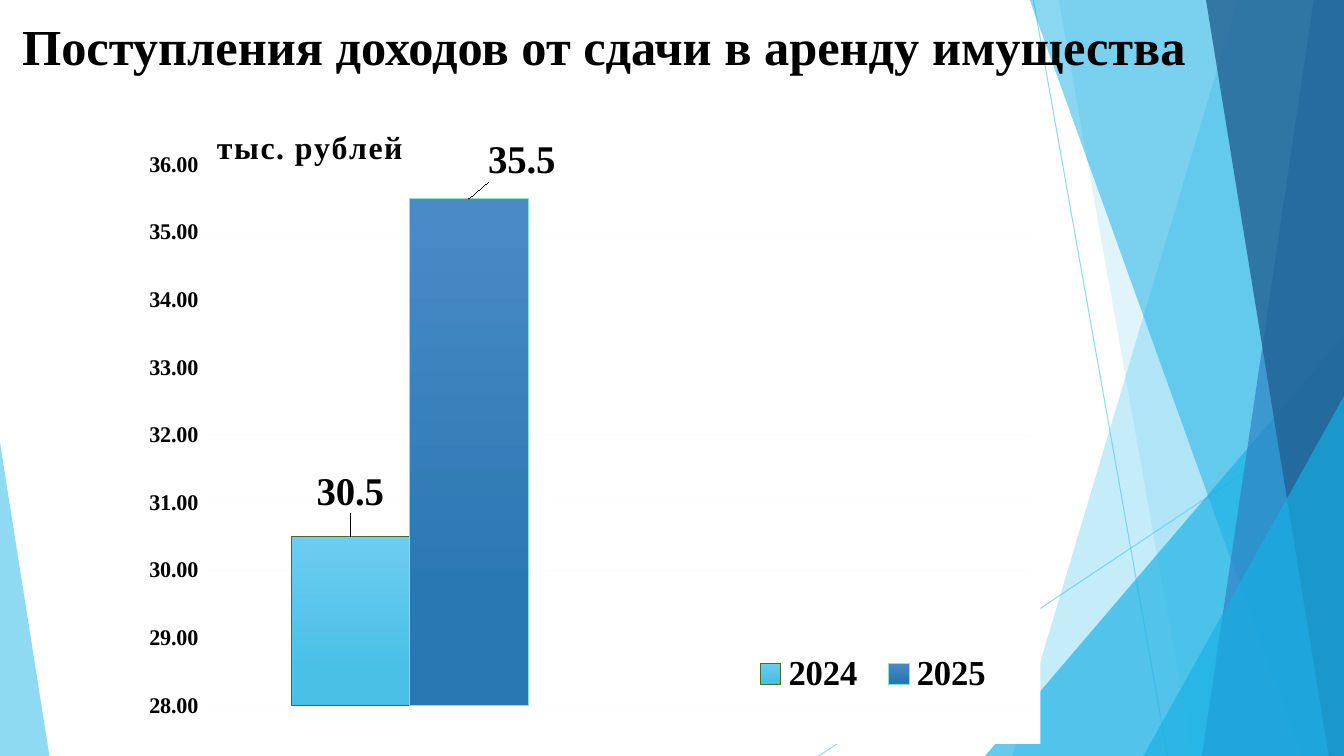
from lxml import etree
from pptx import Presentation
from pptx.chart.data import CategoryChartData
from pptx.dml.color import RGBColor
from pptx.enum.chart import XL_CHART_TYPE, XL_LABEL_POSITION, XL_LEGEND_POSITION, XL_TICK_MARK
from pptx.enum.shapes import MSO_CONNECTOR, MSO_SHAPE
from pptx.enum.text import MSO_ANCHOR
from pptx.oxml.ns import qn
from pptx.util import Inches, Pt

TRIANGLE = MSO_SHAPE.ISOSCELES_TRIANGLE
STRAIGHT = MSO_CONNECTOR.STRAIGHT
COLUMNS = XL_CHART_TYPE.COLUMN_CLUSTERED
LABEL_OUTSIDE = XL_LABEL_POSITION.OUTSIDE_END
LEGEND_BOTTOM = XL_LEGEND_POSITION.BOTTOM
NO_TICK = XL_TICK_MARK.NONE
TOP = MSO_ANCHOR.TOP

SERIF = "Times New Roman"
COLORS = {
    "black": "000000", "white": "FFFFFF", "grid": "F2F2F2",
    "sky": "5FCBEF", "cyan": "17B0E4", "blue": "2E83C3", "navy": "226292",
    "light top": "6CCDF0", "light bottom": "4BC0E6", "olive": "4C6E1B",
    "dark top": "4A8BC6", "dark bottom": "2A78B2", "mint": "8EE3C7",
}
RGB = {name: RGBColor.from_string(value) for name, value in COLORS.items()}


def set_opacity(element, percent):
    for color in element.iter(qn("a:srgbClr")):
        etree.SubElement(color, qn("a:alpha"), val=str(percent * 1000))


def set_layout(parent, index, **settings):
    """Give a chart part a manual layout as its child number index."""
    for old in parent.findall(qn("c:layout")):
        parent.remove(old)
    layout = etree.Element(qn("c:layout"))
    manual = etree.SubElement(layout, qn("c:manualLayout"))
    for name, value in settings.items():
        etree.SubElement(manual, qn("c:" + name), val=str(value))
    parent.insert(index, layout)


deck = Presentation()
deck.slide_width, deck.slide_height = Inches(13.33), Inches(7.5)
page = deck.slides.add_slide(deck.slide_layouts[6])

# Background decoration
for ends in [(10.25, 0, 11.58, 7.5), (13.33, 4.03, 8.12, 7.5)]:
    line = page.shapes.add_connector(STRAIGHT, *[Inches(value) for value in ends])
    line.line.color.rgb = RGB["sky"]
    line.line.width = Pt(0.75)
    properties = line._element.spPr
    set_opacity(properties, 70)
    etree.SubElement(properties, qn("a:effectLst"))

# Bands: top x, bottom x. Triangles: left, top, width, apex.
facets = [
    ("sky", 36, (12.28, 10.04)),
    ("sky", 20, (10.5, 11.83)),
    ("cyan", 66, (9.77, 3.33, 3.56, 1)),
    ("cyan", 50, (10.21, 12.91)),
    ("blue", 70, (13.03, 11.92)),
    ("navy", 80, (11.96, 13.18)),
    ("cyan", 66, (11.34, 3.93, 1.99, 1)),
    ("sky", 70, (0, 4.39, 0.49, 0)),
]
for color, opacity, geometry in facets:
    if len(geometry) == 2:
        top_x, bottom_x = geometry
        corners = [(13.33, -0.01), (13.33, 7.5), (bottom_x, 7.5)]
        outline = page.shapes.build_freeform(Inches(top_x), Inches(-0.01))
        outline.add_line_segments([(Inches(x), Inches(y)) for x, y in corners])
        facet = outline.convert_to_shape()
    else:
        left, top, width, apex = geometry
        facet = page.shapes.add_shape(
            TRIANGLE, Inches(left), Inches(top), Inches(width), Inches(7.5 - top))
        facet.adjustments[0] = apex
    facet.shadow.inherit = False
    facet.line.fill.background()
    facet.fill.solid()
    facet.fill.fore_color.rgb = RGB[color]
    set_opacity(facet._element.spPr, opacity)

# Heading
box = page.shapes.add_textbox(Inches(0.06), Inches(0.1), Inches(13.2), Inches(1.04))
frame = box.text_frame
frame.word_wrap = True
frame.vertical_anchor = TOP
frame.margin_left = Inches(0.16)
span = frame.paragraphs[0].add_run()
span.text = "Поступления доходов от сдачи в аренду имущества"
span.font.name, span.font.size, span.font.bold = SERIF, Pt(36), True
span.font.color.rgb = RGB["black"]

# Chart
data = CategoryChartData()
data.categories = ["1", ""]
data.add_series("2024", [30.5, None])
data.add_series("2025", [35.5, None])
chart = page.shapes.add_chart(
    COLUMNS, Inches(1.48), Inches(1.07), Inches(8.84), Inches(6.31), data).chart
chart.font.name, chart.font.size = "Lato", Pt(10)
chart.font.color.rgb = RGB["black"]

area = etree.Element(qn("c:spPr"))
area_fill = etree.SubElement(area, qn("a:solidFill"))
etree.SubElement(area_fill, qn("a:srgbClr"), val=COLORS["white"])
area_line = etree.SubElement(area, qn("a:ln"))
etree.SubElement(area_line, qn("a:noFill"))
chart_node = chart.element.find(qn("c:chart"))
chart_node.addnext(area)
set_layout(chart_node.find(qn("c:plotArea")), 0, layoutTarget="inner",
           xMode="edge", yMode="edge", x=0.05, y=0.09, w=0.94, h=0.85)

chart.has_title = True
span = chart.chart_title.text_frame.paragraphs[0].add_run()
span.text = "тыс. рублей"
span._r.get_or_add_rPr().set("spc", "100")
set_layout(chart_node.find(qn("c:title")), 1, xMode="edge", yMode="edge", x=0.06, y=0.02)

chart.has_legend = True
chart.legend.position = LEGEND_BOTTOM
chart.legend.include_in_layout = False
set_layout(chart_node.find(qn("c:legend")), 1, xMode="edge", yMode="edge",
           x=0.66, y=0.84, w=0.3, h=0.1)

chart.category_axis.visible = False
scale = chart.value_axis
scale.minimum_scale, scale.maximum_scale, scale.major_unit = 28, 36, 1
scale.major_tick_mark = scale.minor_tick_mark = NO_TICK
scale.tick_labels.number_format = "0.00"
scale.tick_labels.number_format_is_linked = False
scale.format.line.fill.background()
grid = scale.major_gridlines.format.line
grid.color.rgb = RGB["grid"]
grid.width = Pt(0.75)
set_opacity(scale.major_gridlines._xAx.find(qn("c:majorGridlines")), 10)

fonts = [(span.font, 23), (chart.legend.font, 25), (scale.tick_labels.font, 16)]

plot = chart.plots[0]
plot.gap_width, plot.overlap, plot.vary_by_categories = 150, 0, False
looks = [
    ("light top", "light bottom", "olive", 0, -0.03),
    ("dark top", "dark bottom", "mint", 0.06, -0.02),
]
for series, (top_color, bottom_color, edge, shift_x, shift_y) in zip(plot.series, looks):
    fill = series.format.fill
    fill.gradient()
    fill.gradient_angle = 270
    for stop, color, position in zip(
            fill.gradient_stops, (top_color, bottom_color), (0, 0.78)):
        stop.color.rgb = RGB[color]
        stop.position = position
    series.format.line.color.rgb = RGB[edge]
    series.format.line.width = Pt(0.75)
    label = series.points[0].data_label
    label.position = LABEL_OUTSIDE
    fonts.append((label.font, 28))
    set_layout(series._element.find(".//" + qn("c:dLbl")), 1, x=shift_x, y=shift_y)

for font, size in fonts:
    font.name, font.size, font.bold = SERIF, Pt(size), True
    font.color.rgb = RGB["black"]

deck.save("out.pptx")
